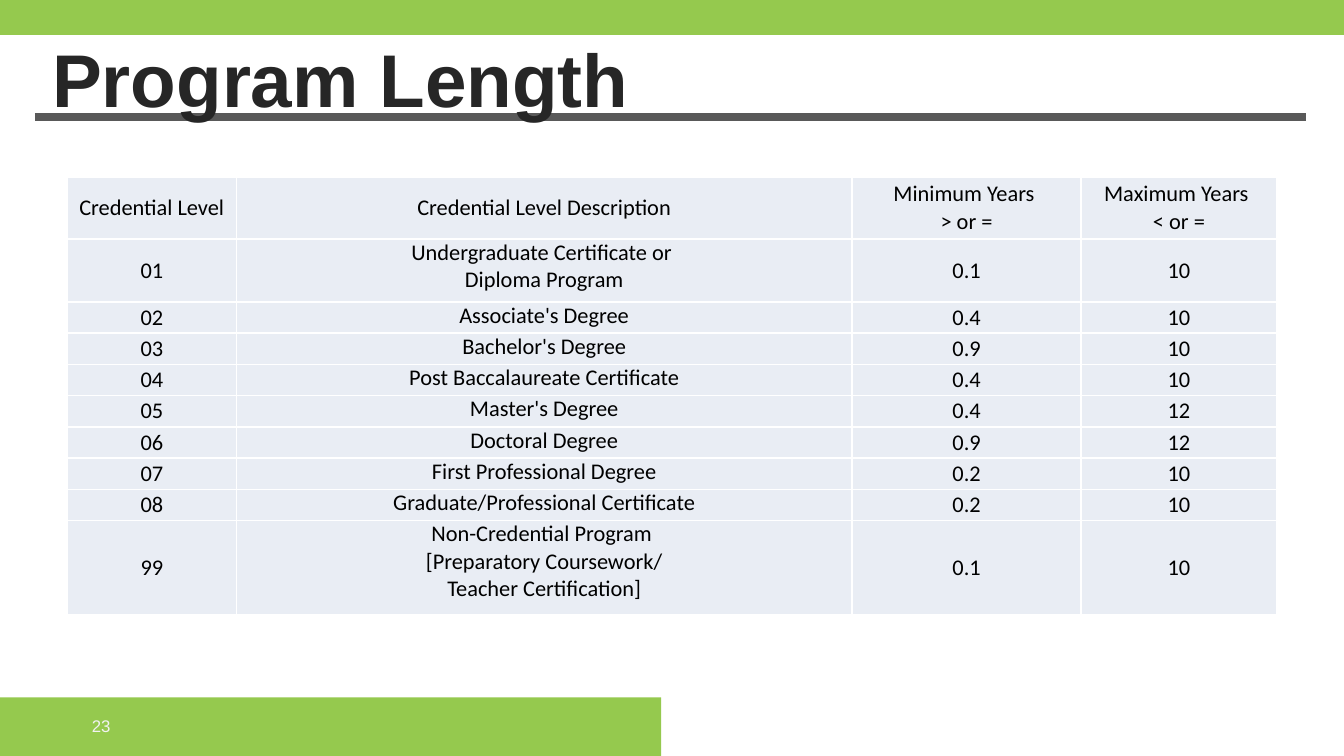
import copy

import pptx
import pptx.dml.color
import pptx.enum.shapes
import pptx.enum.text
import pptx.oxml
import pptx.oxml.ns
import pptx.util

RGBColor = pptx.dml.color.RGBColor
GREEN = RGBColor(0x95, 0xC9, 0x4E)
GRAY = RGBColor(0x59, 0x59, 0x59)
CHARCOAL = RGBColor(0x26, 0x26, 0x26)
BLACK = RGBColor(0, 0, 0)
OFF_WHITE = RGBColor(0xF2, 0xF2, 0xF2)
WHITE = RGBColor(0xFF, 0xFF, 0xFF)
PALE_BLUE = RGBColor(0xE9, 0xED, 0xF4)

ANCHOR = pptx.enum.text.MSO_ANCHOR
ALIGN = pptx.enum.text.PP_ALIGN

HEADINGS = ("Credential Level", "Credential Level Description",
            "Minimum Years \n> or =", "Maximum Years \n< or =")
CREDENTIALS = (
    ("01", "Undergraduate Certificate or \nDiploma Program", "0.1", "10"),
    ("02", "Associate's Degree", "0.4", "10"),
    ("03", "Bachelor's Degree", "0.9", "10"),
    ("04", "Post Baccalaureate Certificate", "0.4", "10"),
    ("05", "Master's Degree", "0.4", "12"),
    ("06", "Doctoral Degree", "0.9", "12"),
    ("07", "First Professional Degree", "0.2", "10"),
    ("08", "Graduate/Professional Certificate", "0.2", "10"),
    ("99", "Non-Credential Program \n[Preparatory Coursework/\nTeacher Certification]",
     "0.1", "10"),
)


def write(frame, text, *, font, size, color, bold=False, align=ALIGN.LEFT):
    """Fill a text frame with one formatted paragraph, keeping its line breaks."""
    paragraph = frame.paragraphs[0]
    paragraph.text = text
    paragraph.alignment = align
    for run in paragraph.runs:
        run.font.name = font
        run.font.size = pptx.util.Pt(size)
        run.font.bold = bold
        run.font.color.rgb = color
    for line_break in paragraph._p.findall(pptx.oxml.ns.qn("a:br")):
        line_break.append(copy.deepcopy(paragraph.runs[0]._r.rPr))


class SlideBuilder:
    """Draw styled elements on a slide with a grid of 100 columns."""

    heading_font = "Arial"
    table_font = "Calibri"

    def __init__(self, presentation):
        self.slide = presentation.slides.add_slide(presentation.slide_layouts[6])
        self.unit = presentation.slide_width / 100

    def grid(self, *lengths):
        return [round(length * self.unit) for length in lengths]

    def band(self, left, top, width, height):
        band = self.slide.shapes.add_shape(
            pptx.enum.shapes.MSO_SHAPE.RECTANGLE, *self.grid(left, top, width, height))
        band.shadow.inherit = False
        band.fill.solid()
        band.fill.fore_color.rgb = GREEN
        band.line.fill.background()

    def rule(self, start, end, row, weight):
        rule = self.slide.shapes.add_connector(
            pptx.enum.shapes.MSO_CONNECTOR.STRAIGHT, *self.grid(start, row, end, row))
        rule.line.color.rgb = GRAY
        rule.line.width = pptx.util.Pt(weight)
        rule._element.spPr.append(pptx.oxml.parse_xml(
            f"<a:effectLst {pptx.oxml.ns.nsdecls('a')}/>"))

    def label(self, text, left, top, width, height, *, anchor, inset_top=0, **style):
        box = self.slide.shapes.add_textbox(*self.grid(left, top, width, height))
        frame = box.text_frame
        frame.word_wrap = True
        frame.vertical_anchor = anchor
        frame.margin_top, frame.margin_bottom = self.grid(inset_top, 0)
        write(frame, text, font=self.heading_font, **style)

    def table(self, rows, left, top, height, columns):
        line_counts = [max(text.count("\n") + 1 for text in row) for row in rows]
        line_height = height / sum(line_counts)
        table = self.slide.shapes.add_table(
            len(rows), len(columns),
            *self.grid(left, top, sum(columns), height)).table
        table.first_row = table.horz_banding = False
        for column, width in zip(table.columns, self.grid(*columns)):
            column.width = width
        for r, (row, lines) in enumerate(zip(rows, line_counts)):
            table.rows[r].height, = self.grid(lines * line_height)
            for c, text in enumerate(row):
                is_description = r > 0 and c == 1
                self.cell(table.cell(r, c), text,
                          ANCHOR.TOP if is_description else ANCHOR.MIDDLE)

    def cell(self, cell, text, anchor):
        cell.margin_left, cell.margin_right = self.grid(0.8, 0.8)
        cell.margin_top = cell.margin_bottom = 0
        cell.vertical_anchor = anchor
        for side in "LRTB":
            cell._tc.get_or_add_tcPr().append(pptx.oxml.parse_xml(
                f'<a:ln{side} {pptx.oxml.ns.nsdecls("a")} w="{pptx.util.Pt(1)}">'
                f'<a:solidFill><a:srgbClr val="{WHITE}"/></a:solidFill></a:ln{side}>'))
        cell.fill.solid()
        cell.fill.fore_color.rgb = PALE_BLUE
        write(cell.text_frame, text, font=self.table_font, size=12, color=BLACK,
              align=ALIGN.CENTER)


def main():
    presentation = pptx.Presentation()
    presentation.slide_width = pptx.util.Inches(10)
    presentation.slide_height = presentation.slide_width * 9 // 16

    builder = SlideBuilder(presentation)
    builder.band(0, 51.9, 49.2, 4.4)
    builder.band(-0.2, 0, 100.3, 2.6)
    builder.rule(2.6, 97.2, 8.7, weight=4)
    builder.label("Program Length", 2.9, 2, 93.5, 5.3, anchor=ANCHOR.TOP, inset_top=0.45,
                  size=40, color=CHARCOAL, bold=True)
    builder.table((HEADINGS, *CREDENTIALS), 5, 13.15, 32.6, (12.6, 45.8, 17.05, 14.55))
    builder.label("23", 5.85, 52.5, 23.3, 3, anchor=ANCHOR.MIDDLE,
                  size=9, color=OFF_WHITE)

    presentation.save("out.pptx")


if __name__ == "__main__":
    main()
